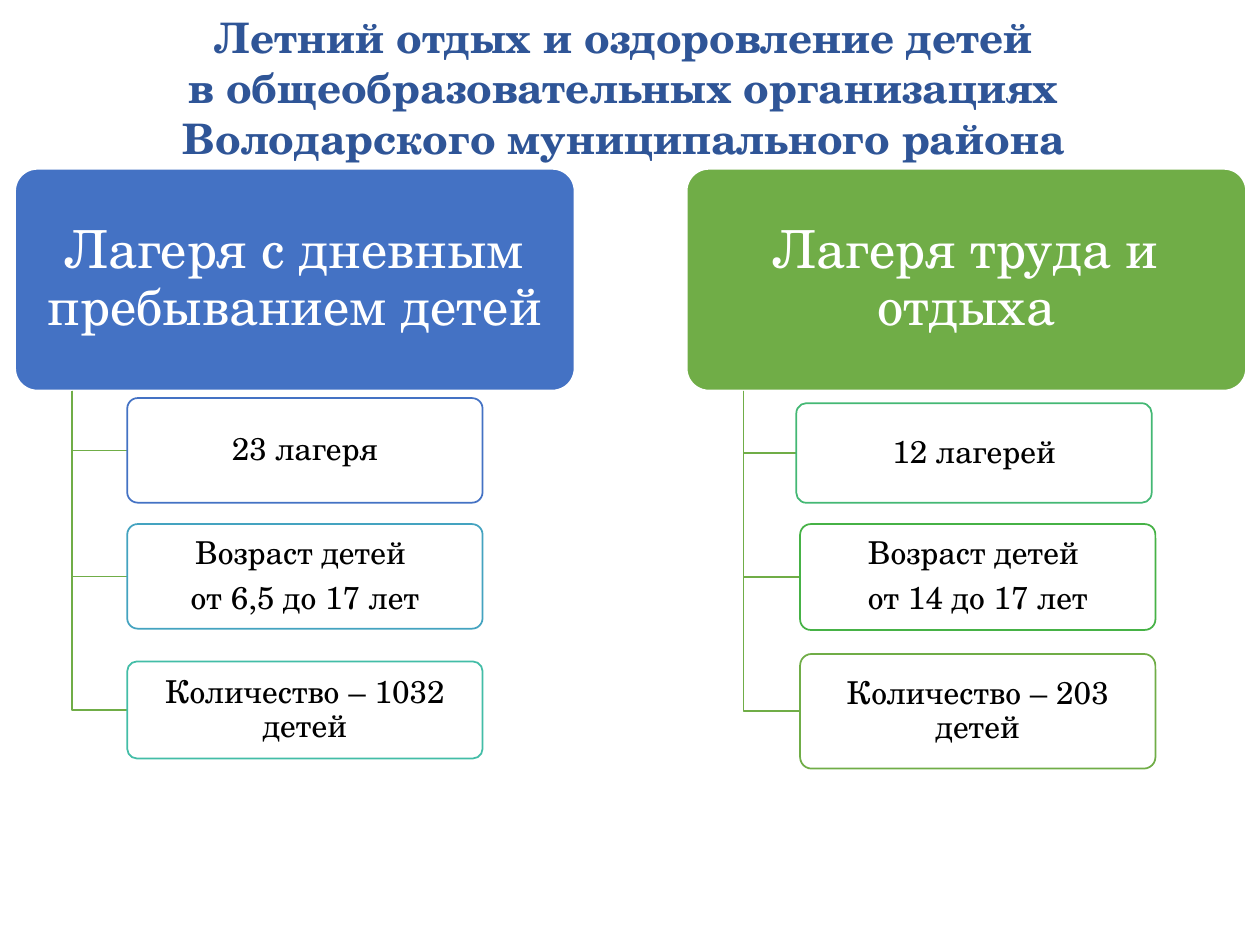
from dataclasses import dataclass

from lxml.etree import SubElement
from pptx import Presentation
from pptx.dml.color import RGBColor
from pptx.enum.shapes import MSO_SHAPE
from pptx.enum.text import MSO_ANCHOR, MSO_AUTO_SIZE, PP_ALIGN
from pptx.oxml import parse_xml
from pptx.oxml.ns import nsdecls, qn
from pptx.util import Inches, Pt

FONT = "TeX Gyre Schola"
COLORS = {
    "title": "2F5597", "title_outline": "2E75B6",
    "white": "FFFFFF", "black": "000000",
    "blue": "4472C4", "sky": "44A3C0", "teal": "43BDA7",
    "mint": "44B874", "leaf": "46B246", "green": "70AD47",
}
HEAD_TOP, HEAD_WIDTH, HEAD_HEIGHT = 1.34, 4.44, 1.76
DETAIL_WIDTH = 2.82
TRUNK_INDENT = 0.45


@dataclass
class Detail:
    text: str
    left: float
    top: float
    height: float
    color: str


@dataclass
class Camp:
    name: str
    left: float
    color: str
    details: list[Detail]


TITLE = ("Летний отдых и оздоровление детей \n"
         "в общеобразовательных организациях \n"
         "Володарского муниципального района ")
CAMPS = [
    Camp("Лагеря с дневным пребыванием детей", 0.12, "blue", [
        Detail("23 лагеря", 1.01, 3.16, 0.83, "blue"),
        Detail("Возраст детей \nот 6,5 до 17 лет", 1.01, 4.16, 0.83, "sky"),
        Detail("Количество – 1032 детей", 1.01, 5.25, 0.77, "teal"),
    ]),
    Camp("Лагеря труда и отдыха", 5.45, "green", [
        Detail("12 лагерей", 6.32, 3.2, 0.79, "mint"),
        Detail("Возраст детей \nот 14 до 17 лет", 6.35, 4.16, 0.84, "leaf"),
        Detail("Количество – 203 детей", 6.35, 5.19, 0.91, "green"),
    ]),
]


def rgb(name: str) -> RGBColor:
    return RGBColor.from_string(COLORS[name])


def write_text(frame, text: str, size: float, color: str, bold: bool = False) -> None:
    frame.text = text
    for paragraph in frame.paragraphs:
        paragraph.alignment = PP_ALIGN.CENTER
        for span in paragraph.runs:
            span.font.name = FONT
            span.font.size = Pt(size)
            span.font.bold = bold
            span.font.color.rgb = rgb(color)


def add_title(page) -> None:
    box = page.shapes.add_textbox(Inches(1.3), Inches(0.04), Inches(7.4), Inches(1.31))
    frame = box.text_frame
    frame.word_wrap = False
    frame.auto_size = MSO_AUTO_SIZE.SHAPE_TO_FIT_TEXT
    write_text(frame, TITLE, 24, "title", bold=True)
    for paragraph in frame.paragraphs:
        for span in paragraph.runs:
            outline = parse_xml(
                f'<a:ln {nsdecls("a")} w="{Pt(0.25)}"><a:solidFill>'
                f'<a:srgbClr val="{COLORS["title_outline"]}"/></a:solidFill></a:ln>')
            span.font._element.insert(0, outline)


def add_card(page, text: str, left: float, top: float, width: float, height: float,
             fill: str, line: str, size: float, color: str,
             side_inset: float, end_inset: float):
    card = page.shapes.add_shape(MSO_SHAPE.ROUNDED_RECTANGLE, Inches(left), Inches(top),
                                 Inches(width), Inches(height))
    card.adjustments[0] = 0.1
    card.shadow.inherit = False
    card.fill.solid()
    card.fill.fore_color.rgb = rgb(fill)
    card.line.color.rgb = rgb(line)
    card.line.width = Pt(1)
    frame = card.text_frame
    frame.word_wrap = True
    frame.vertical_anchor = MSO_ANCHOR.MIDDLE
    frame.margin_left = frame.margin_right = Inches(side_inset)
    frame.margin_top = frame.margin_bottom = Inches(end_inset)
    write_text(frame, text, size, color)
    for paragraph in frame.paragraphs:
        paragraph.line_spacing = 0.9
        paragraph.space_after = Pt(size * 0.35)
    return card


def add_branch(page, trunk: float, detail: Detail) -> None:
    """Draw the elbow from the heading's lower edge to the detail card."""
    middle = Inches(detail.top + detail.height / 2)
    builder = page.shapes.build_freeform(Inches(trunk), Inches(HEAD_TOP + HEAD_HEIGHT))
    builder.add_line_segments([(Inches(trunk), middle), (Inches(detail.left), middle)],
                              close=False)
    branch = builder.convert_to_shape()
    branch.shadow.inherit = False
    branch.fill.background()
    branch.line.color.rgb = rgb("green")
    branch.line.width = Pt(1)


def add_camp(page, camp: Camp) -> None:
    add_card(page, camp.name, camp.left, HEAD_TOP, HEAD_WIDTH, HEAD_HEIGHT,
             camp.color, "white", 30, "white", 0.11, 0.09)
    for detail in camp.details:
        add_branch(page, camp.left + TRUNK_INDENT, detail)
        card = add_card(page, detail.text, detail.left, detail.top, DETAIL_WIDTH,
                        detail.height, "white", detail.color, 18, "black", 0.06, 0.05)
        fill_color = card._element.spPr.find(qn("a:solidFill"))[0]
        SubElement(fill_color, qn("a:alpha")).set("val", "90000")


def main() -> None:
    deck = Presentation()
    deck.slide_width, deck.slide_height = Inches(10), Inches(7.5)
    page = deck.slides.add_slide(deck.slide_layouts[6])
    add_title(page)
    for camp in CAMPS:
        add_camp(page, camp)
    deck.save("out.pptx")


if __name__ == "__main__":
    main()
